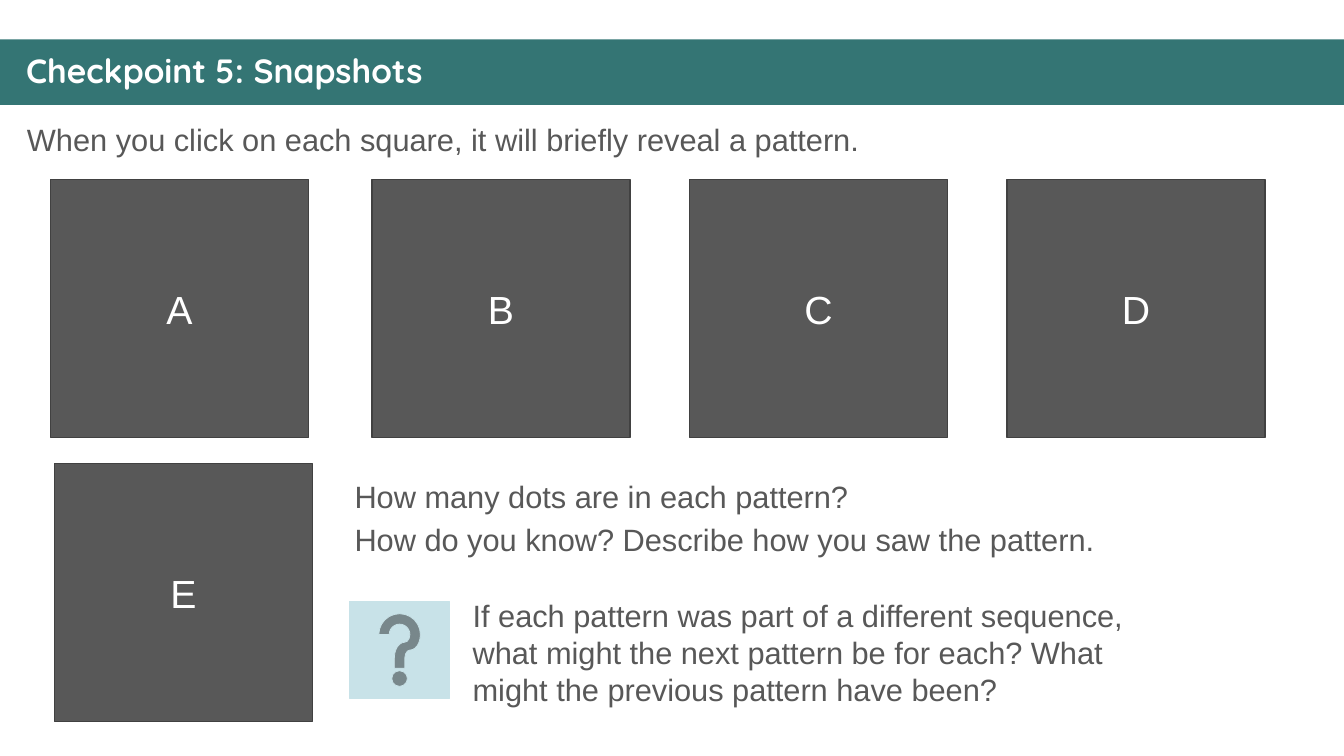
from pptx import Presentation
from pptx.dml.color import RGBColor
from pptx.enum.shapes import MSO_SHAPE
from pptx.enum.text import MSO_ANCHOR, MSO_AUTO_SIZE, PP_ALIGN
from pptx.util import Pt

TEAL, GREY, EDGE, PALE, WHITE = "347574", "585858", "414141", "C8E2E8", "FFFFFF"
SQUARE = 184.3


def colour(value):
    """Return the colour for a hex string."""
    return RGBColor.from_string(value)


def write(frame, text, size=22, ink=GREY, font="Arial", bold=False,
          align=PP_ALIGN.LEFT, anchor=MSO_ANCHOR.TOP, before=None, spacing=None):
    """Fill a text frame with one paragraph for each line of text."""
    frame.word_wrap = True
    frame.vertical_anchor = anchor
    for index, line in enumerate(text.split("\n")):
        para = frame.paragraphs[0] if index == 0 else frame.add_paragraph()
        para.alignment = align
        para.space_before = Pt(size * 0.2 if before is None else before)
        if spacing:
            para.line_spacing = spacing
        span = para.add_run()
        span.text = line
        span.font.name = font
        span.font.size = Pt(size)
        span.font.bold = bold
        span.font.color.rgb = colour(ink)


class Slide:
    """Hold the style and the current slide."""

    def __init__(self, page):
        """Keep the page that elements are added to."""
        self.page = page

    def title(self, text, left, top, width, height):
        """Place and format the title placeholder."""
        box = self.page.shapes.title
        box.left, box.top, box.width, box.height = map(Pt, (left, top, width, height))
        box.text_frame.auto_size = MSO_AUTO_SIZE.NONE
        write(box.text_frame, text, size=24, ink=WHITE, font="Quicksand", bold=True,
              anchor=MSO_ANCHOR.MIDDLE, before=0, spacing=0.9)

    def shape(self, kind, left, top, width, height, fill, line=None, weight=1):
        """Add a filled preset shape."""
        box = self.page.shapes.add_shape(kind, *map(Pt, (left, top, width, height)))
        box.shadow.inherit = False
        box.fill.solid()
        box.fill.fore_color.rgb = colour(fill)
        if line:
            box.line.color.rgb = colour(line)
            box.line.width = Pt(weight)
        else:
            box.line.fill.background()
        return box

    def band(self, top, width, height):
        """Add the coloured band behind the title."""
        box = self.shape(MSO_SHAPE.RECTANGLE, 0, top, width, height, TEAL)
        self.page.shapes.title.element.addprevious(box.element)

    def square(self, letter, left, top):
        """Add a lettered cover square."""
        box = self.shape(MSO_SHAPE.RECTANGLE, left, top, SQUARE, SQUARE, GREY, EDGE)
        write(box.text_frame, letter, size=28, ink=WHITE,
              align=PP_ALIGN.CENTER, anchor=MSO_ANCHOR.MIDDLE)

    def text(self, text, left, top, width, height):
        """Add a text box that grows with its text."""
        box = self.page.shapes.add_textbox(*map(Pt, (left, top, width, height)))
        write(box.text_frame, text)
        box.text_frame.auto_size = MSO_AUTO_SIZE.SHAPE_TO_FIT_TEXT


def main():
    """Build and save the slide."""
    deck = Presentation()
    deck.slide_width, deck.slide_height = Pt(960), Pt(540)
    slide = Slide(deck.slides.add_slide(deck.slide_layouts[5]))

    slide.title("Checkpoint 5: Snapshots", 11.5, 34.6, 939, 33.8)
    slide.band(28.2, 960, 46.8)
    slide.text("When you click on each square, it will briefly reveal a pattern.",
               12.2, 82.8, 898, 33.8)

    slide.square("A", 36, 128.2)
    for column, letter in enumerate("BCD"):
        slide.square(letter, 265.7 + column * 226.8, 128.2)
    slide.square("E", 38.9, 331.2)

    slide.text("How many dots are in each pattern?\n"
               "How do you know? Describe how you saw the pattern.",
               246.2, 337.7, 584, 66.2)
    slide.shape(MSO_SHAPE.ACTION_BUTTON_HELP, 249.8, 429.8, 71.3, 69.1, PALE, PALE, 0.5)
    slide.text("If each pattern was part of a different sequence, what might the next "
               "pattern be for each? What might the previous pattern have been?",
               330.5, 422.6, 493.2, 87.1)

    deck.save("out.pptx")


if __name__ == "__main__":
    main()
